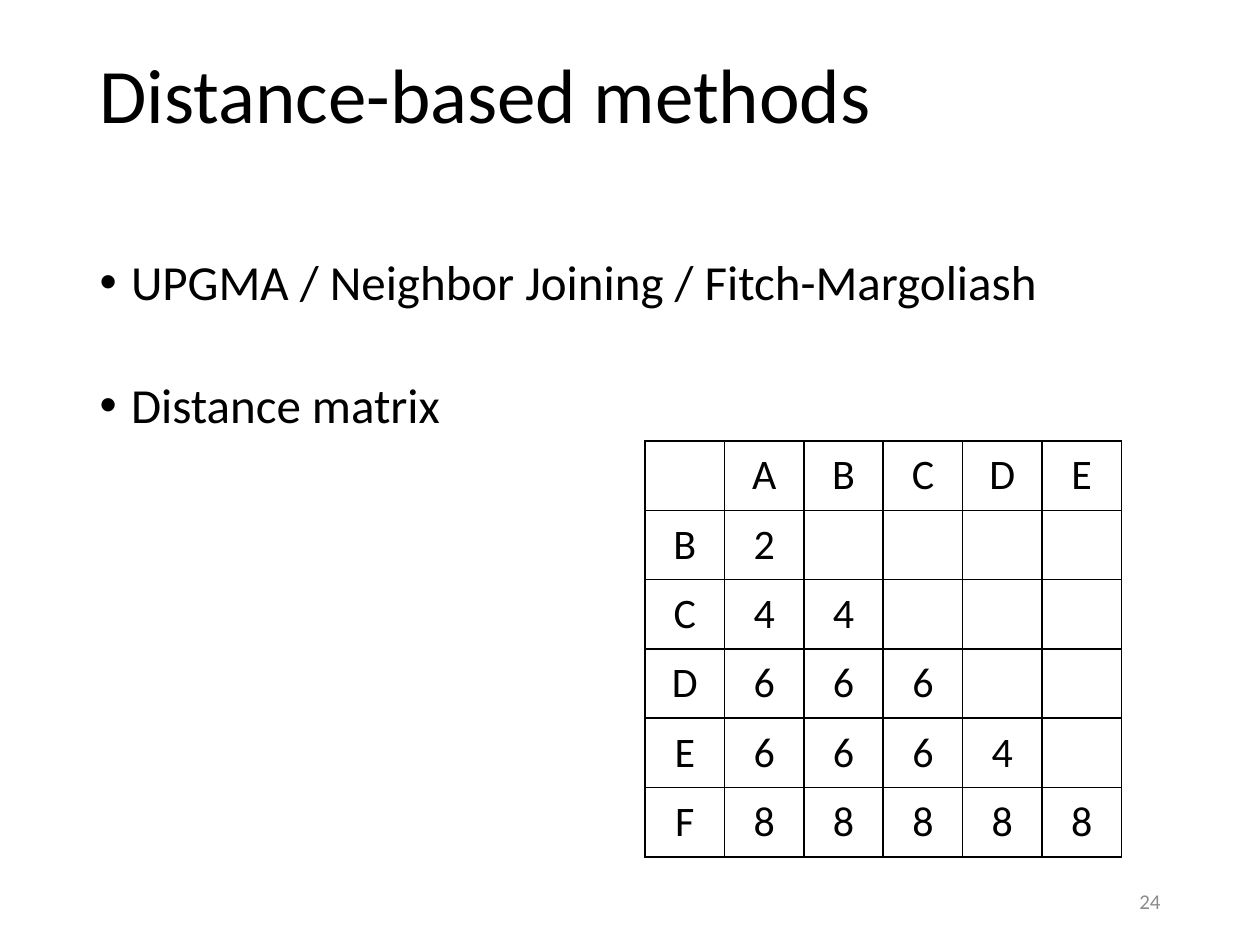
from dataclasses import dataclass
from typing import Any

from lxml import etree
from pptx import Presentation
from pptx import util as u
from pptx.dml.color import RGBColor
from pptx.enum import text
from pptx.oxml.ns import qn

COLORS = {"ink": "000000", "muted": "8C8C8C", "paper": "FFFFFF"}
BULLETS = ["UPGMA / Neighbor Joining / Fitch-Margoliash", "Distance matrix"]
DISTANCES = {
    "B": [2],
    "C": [4, 4],
    "D": [6, 6, 6],
    "E": [6, 6, 6, 4],
    "F": [8, 8, 8, 8, 8],
}


@dataclass
class SlideBuilder:
    page: Any
    font: str = "Calibri"

    def place(self, box, left, top, width, height):
        box.left, box.top = u.Inches(left), u.Inches(top)
        box.width, box.height = u.Inches(width), u.Inches(height)

    def frame(self, box, anchor):
        frame = box.text_frame
        frame.word_wrap = True
        frame.auto_size = text.MSO_AUTO_SIZE.NONE
        frame.vertical_anchor = anchor
        return frame

    def add_span(self, para, words, size, align, color="ink"):
        para.alignment = align
        span = para.add_run()
        span.text = words
        span.font.name = self.font
        span.font.size = u.Pt(size)
        span.font.color.rgb = RGBColor.from_string(COLORS[color])

    def title(self, words, *area):
        box = self.page.shapes.title
        self.place(box, *area)
        para = self.frame(box, text.MSO_ANCHOR.TOP).paragraphs[0]
        para.line_spacing = 0.9
        self.add_span(para, words, 44, text.PP_ALIGN.LEFT)

    def bullets(self, items, *area):
        box = self.page.placeholders[1]
        self.place(box, *area)
        frame = self.frame(box, text.MSO_ANCHOR.TOP)
        for index, words in enumerate(items):
            para = frame.add_paragraph() if index else frame.paragraphs[0]
            props = para._p.get_or_add_pPr()
            props.set("marL", str(u.Inches(0.25)))
            props.set("indent", str(u.Inches(-0.25)))
            etree.SubElement(props, qn("a:buFont")).set("typeface", "Arial")
            etree.SubElement(props, qn("a:buChar")).set("char", "•")
            para.line_spacing = 0.9
            para.space_before = u.Pt(40 if index else 0)
            self.add_span(para, words, 28, text.PP_ALIGN.LEFT)

    def page_number(self, number, *area):
        box = self.page.shapes.add_textbox(*map(u.Inches, area))
        para = self.frame(box, text.MSO_ANCHOR.MIDDLE).paragraphs[0]
        self.add_span(para, number, 12, text.PP_ALIGN.RIGHT, "muted")

    def border(self, cell):
        props = cell._tc.get_or_add_tcPr()
        for index, side in enumerate(("lnL", "lnR", "lnT", "lnB")):
            line = etree.Element(qn(f"a:{side}"), w=str(u.Pt(1)))
            fill = etree.SubElement(line, qn("a:solidFill"))
            etree.SubElement(fill, qn("a:srgbClr")).set("val", COLORS["ink"])
            props.insert(index, line)

    def matrix(self, distances, left, top, col_width, row_height):
        rows = [["", *"ABCDE"]]
        rows += [[name, *values] for name, values in distances.items()]
        count = len(rows)
        table = self.page.shapes.add_table(
            count, count, u.Inches(left), u.Inches(top),
            u.Inches(col_width * count), u.Inches(row_height * count)).table
        table.first_row = table.horz_banding = False
        for column in table.columns:
            column.width = u.Inches(col_width)
        for row in table.rows:
            row.height = u.Inches(row_height)
        for cell in table.iter_cells():
            cell.fill.background()
            cell.vertical_anchor = text.MSO_ANCHOR.MIDDLE
            self.border(cell)
        for r, values in enumerate(rows):
            for c, value in enumerate(values):
                if value:
                    para = table.cell(r, c).text_frame.paragraphs[0]
                    self.add_span(para, str(value), 24, text.PP_ALIGN.CENTER)


def main():
    deck = Presentation()
    deck.slide_width, deck.slide_height = u.Inches(10), u.Inches(7.5)
    page = deck.slides.add_slide(deck.slide_layouts[1])
    page.background.fill.solid()
    page.background.fill.fore_color.rgb = RGBColor.from_string(COLORS["paper"])
    builder = SlideBuilder(page)
    builder.title("Distance-based methods", 0.69, 0.4, 8.62, 1.45)
    builder.bullets(BULLETS, 0.69, 2, 8.62, 4.76)
    builder.page_number("24", 7.06, 6.95, 2.25, 0.4)
    builder.matrix(DISTANCES, 5.12, 3.5, 0.63, 0.55)
    deck.save("out.pptx")


if __name__ == "__main__":
    main()
